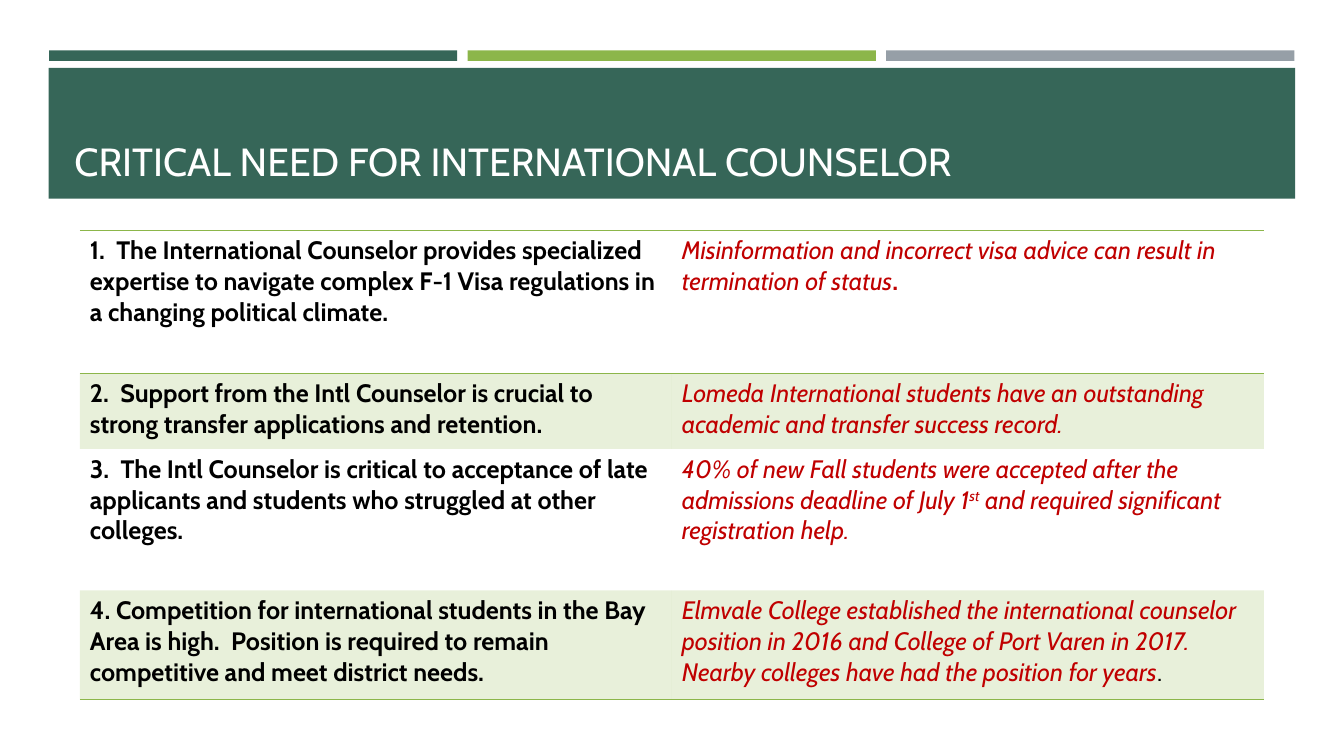
from lxml import etree
from pptx import Presentation
from pptx.dml.color import RGBColor
from pptx.enum import shapes, text
from pptx.oxml import ns
from pptx.util import Pt

DARK_GREEN = RGBColor(0x36, 0x66, 0x58)
LIME = RGBColor(0x8C, 0xB6, 0x4A)
GREY = RGBColor(0x96, 0x9F, 0xA7)
RED = RGBColor(0xC0, 0x00, 0x00)
BLACK = RGBColor(0, 0, 0)
WHITE = RGBColor(0xFF, 0xFF, 0xFF)
FONT = "Cabin"

TITLE = "CRITICAL NEED FOR INTERNATIONAL COUNSELOR"
ROW_HEIGHTS = [102.24, 54, 101, 78]
COLUMN_WIDTH = 422.85

# Each row: the need, then its evidence as (words, style) pieces
ROWS = [
    ("1.  The International Counselor provides specialized expertise to navigate "
     "complex F-1 Visa regulations in a changing political climate.",
     [("Misinformation and incorrect visa advice can result in termination of status",
       "evidence"), (".", "strong stop")]),
    ("2.  Support from the Intl Counselor is crucial to strong transfer applications "
     "and retention.",
     [("Lomeda International students have an outstanding academic and transfer "
       "success record.", "evidence")]),
    ("3.  The Intl Counselor is critical to acceptance of late applicants and students "
     "who struggled at other colleges.",
     [("40% of new Fall students were accepted after the admissions deadline of July 1",
       "evidence"), ("st", "ordinal"),
      (" and required significant registration help.", "evidence")]),
    ("4. Competition for international students in the Bay Area is high.  Position is "
     "required to remain competitive and meet district needs.",
     [("Elmvale College established the international counselor position in 2016 and "
       "College of Port Varen in 2017.  Nearby colleges have had the position for years",
       "evidence"), (".", "plain stop")]),
]

# Style: colour, bold, italic
STYLES = {
    "need": (BLACK, True, False),
    "evidence": (RED, False, True),
    "ordinal": (RED, False, True),
    "strong stop": (RED, True, False),
    "plain stop": (BLACK, False, False),
}


def add_bar(slide, left, top, width, height, color):
    bar = slide.shapes.add_shape(shapes.MSO_SHAPE.RECTANGLE,
                                 Pt(left), Pt(top), Pt(width), Pt(height))
    bar.shadow.inherit = False
    bar.fill.solid()
    bar.fill.fore_color.rgb = color
    bar.line.fill.background()


def format_run(run, size, color, bold=False, italic=False):
    font = run.font
    font.name, font.size = FONT, Pt(size)
    font.bold, font.italic = bold, italic
    font.color.rgb = color


def set_title(slide):
    title = slide.shapes.title
    title.left, title.top = Pt(46), Pt(55.5)
    title.width, title.height = Pt(868), Pt(80)
    frame = title.text_frame
    frame.text = TITLE
    frame.auto_size = text.MSO_AUTO_SIZE.NONE
    frame.vertical_anchor = text.MSO_ANCHOR.BOTTOM
    frame.paragraphs[0].alignment = text.PP_ALIGN.LEFT
    format_run(frame.paragraphs[0].runs[0], 28, WHITE)
    slide.shapes._spTree.append(title._element)  # in front of the band


def write_cell(cell, pieces):
    paragraph = cell.text_frame.paragraphs[0]
    for words, style in pieces:
        run = paragraph.add_run()
        run.text = words
        format_run(run, 18, *STYLES[style])
        if style == "ordinal":
            run.font._element.set("baseline", "30000")


def fill_cell(cell, tinted):
    if not tinted:
        cell.fill.background()
        return
    cell.fill.solid()
    cell.fill.fore_color.rgb = LIME
    color = cell._tc.tcPr.find(ns.qn("a:solidFill"))[0]
    etree.SubElement(color, ns.qn("a:alpha"), val="20000")


def set_borders(cell, ruled_sides):
    """Draw a lime rule on the given sides (T, B) and no line on the others."""
    for position, side in enumerate("LRTB"):
        line = etree.Element(ns.qn("a:ln" + side), w=str(Pt(1)))
        if side in ruled_sides:
            fill = etree.SubElement(line, ns.qn("a:solidFill"))
            etree.SubElement(fill, ns.qn("a:srgbClr"), val=str(LIME))
        else:
            etree.SubElement(line, ns.qn("a:noFill"))
        cell._tc.get_or_add_tcPr().insert(position, line)


def add_needs_table(slide):
    needs = slide.shapes.add_table(len(ROWS), 2, Pt(57), Pt(164.4),
                                   Pt(2 * COLUMN_WIDTH), Pt(sum(ROW_HEIGHTS))).table
    needs.first_row = needs.horz_banding = False
    for column in needs.columns:
        column.width = Pt(COLUMN_WIDTH)
    ruled_sides = ["TB", "T", "", "B"]
    for index, (need, evidence) in enumerate(ROWS):
        needs.rows[index].height = Pt(ROW_HEIGHTS[index])
        for column, pieces in enumerate([[(need, "need")], evidence]):
            cell = needs.cell(index, column)
            write_cell(cell, pieces)
            fill_cell(cell, tinted=index % 2 == 1)
            set_borders(cell, ruled_sides[index])


def main():
    deck = Presentation()
    deck.slide_width, deck.slide_height = Pt(960), Pt(540)
    slide = deck.slides.add_slide(deck.slide_layouts[5])
    for index, color in enumerate([DARK_GREEN, LIME, GREY]):
        add_bar(slide, 35 + index * 299, 36, 291.6, 7.5, color)
    add_bar(slide, 34.7, 48.5, 890.5, 93.5, DARK_GREEN)
    set_title(slide)
    add_needs_table(slide)
    deck.save("out.pptx")


if __name__ == "__main__":
    main()
